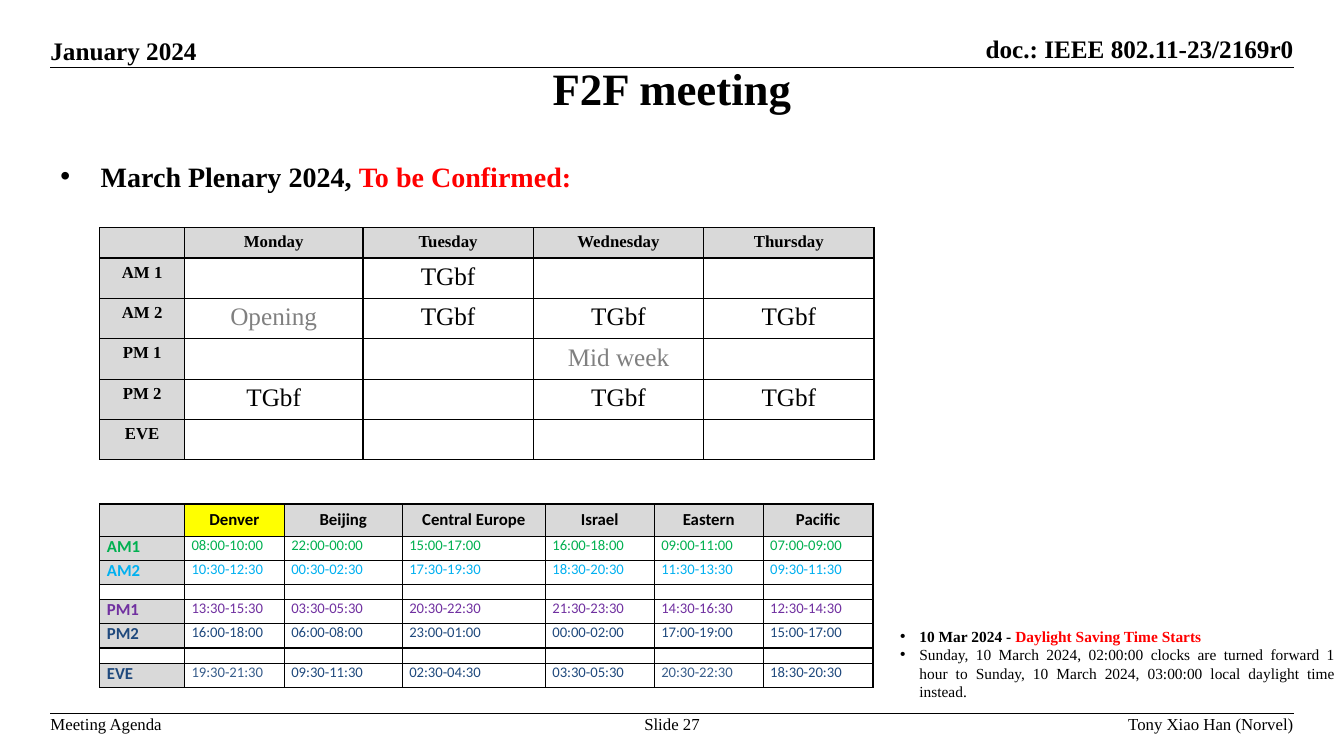
from pptx import Presentation
from pptx.dml.color import RGBColor
from pptx.enum.shapes import MSO_CONNECTOR as CONN, MSO_SHAPE as SHAPE
from pptx.enum.text import MSO_ANCHOR as ANCHOR, PP_ALIGN as ALIGN
from pptx.oxml.ns import qn
from pptx.util import Inches, Pt
from lxml.etree import SubElement

THEME = dict(
    serif="Times New Roman", sans="Calibri",
    black="000000", white="FFFFFF", red="FF0000", gray="808080", head="D9D9D9",
    host="FFFF00", am1="00B050", am2="00B0F0", pm1="7030A0", pm2="1F497D",
    late="385D8B",
    title=32, bullet=20, header=18, session=18, label=12, note=11, time=10.5,
    spacer=6,
)


def write(p, *parts, size="label", font="serif", color="black", bold=False,
          align=ALIGN.LEFT, after=0, hang=0):
    """Fill a paragraph; a part is a text or a (text, color) pair."""
    p.alignment = align
    p.space_after = Pt(after)
    if hang:
        pPr = p._p.get_or_add_pPr()
        pPr.set("marL", str(Inches(hang)))
        pPr.set("indent", str(-Inches(hang)))
        SubElement(pPr, qn("a:buFont")).set("typeface", "Arial")
        SubElement(pPr, qn("a:buChar")).set("char", "•")
    for part in parts:
        text, tint = part if isinstance(part, tuple) else (part, color)
        if not text:
            p._p.get_or_add_endParaRPr().set("sz", str(THEME[size] * 100))
            continue
        r = p.add_run()
        r.text = text
        r.font.size = Pt(THEME[size])
        r.font.name = THEME[font]
        r.font.bold = bold
        r.font.color.rgb = RGBColor.from_string(THEME[tint])


def add_grid(top, widths, heights, margin_x, margin_y):
    """Add an unstyled table with black cell borders."""
    width, height = Inches(sum(widths)), Inches(sum(heights))
    table = s.shapes.add_table(len(heights), len(widths), Inches(0.99),
                               Inches(top), width, height).table
    table.first_row = table.horz_banding = False
    for column, w in zip(table.columns, widths):
        column.width = Inches(w)
    for row, h in zip(table.rows, heights):
        row.height = Inches(h)
    for cell in table.iter_cells():
        cell.margin_left = cell.margin_right = Inches(margin_x)
        cell.margin_top = cell.margin_bottom = Inches(margin_y)
        tcPr = cell._tc.get_or_add_tcPr()
        for side in ("lnL", "lnR", "lnT", "lnB"):
            ln = SubElement(tcPr, qn(f"a:{side}"), w=str(Pt(1)))
            fill = SubElement(ln, qn("a:solidFill"))
            SubElement(fill, qn("a:srgbClr")).set("val", THEME["black"])
        cell.fill.background()
    return table


prs = Presentation()
prs.slide_width, prs.slide_height = Inches(13.33), Inches(7.5)
s = prs.slides.add_slide(prs.slide_layouts[6])

# Header and footer rules
for y in (0.67, 7.08):
    rule = s.shapes.add_connector(CONN.STRAIGHT, Inches(0.5), Inches(y),
                                  Inches(12.83), Inches(y))
    rule.line.width = Pt(1)
    rule.line.color.rgb = RGBColor.from_string(THEME["black"])
    SubElement(rule._element.spPr, qn("a:effectLst"))

# Header, footer and title
strong = dict(size="header", bold=True)
for text, box, anchor, wrap, style in (
    ("January 2024", (0.5, 0.35, 1.47, 0.3), ANCHOR.BOTTOM, False, strong),
    ("doc.: IEEE 802.11-23/2169r0", (9.24, 0.33, 3.59, 0.3), ANCHOR.BOTTOM, False,
     dict(strong, align=ALIGN.RIGHT)),
    ("Meeting Agenda", (0.5, 7.08, 1.12, 0.2), ANCHOR.TOP, False, {}),
    ("Slide 27", (6.37, 7.08, 0.59, 0.2), ANCHOR.TOP, False, dict(align=ALIGN.CENTER)),
    ("Tony Xiao Han (Norvel)", (8.82, 7.08, 4.01, 0.2), ANCHOR.TOP, True,
     dict(align=ALIGN.RIGHT)),
    ("F2F meeting", (0, 0.58, 13.33, 0.58), ANCHOR.MIDDLE, True,
     dict(size="title", bold=True, align=ALIGN.CENTER)),
):
    tf = s.shapes.add_textbox(*map(Inches, box)).text_frame
    tf.margin_left = tf.margin_right = tf.margin_top = tf.margin_bottom = 0
    tf.vertical_anchor, tf.word_wrap = anchor, wrap
    write(tf.paragraphs[0], text, **style)

# Meeting bullet
tf = s.shapes.add_textbox(Inches(0.5), Inches(1.53), Inches(7.17), Inches(0.92)).text_frame
tf.word_wrap = True
write(tf.paragraphs[0], "March Plenary 2024, ", ("To be Confirmed:", "red"),
      size="bullet", bold=True, align=ALIGN.JUSTIFY, after=6, hang=0.4)

# Session times by zone
zones = ["", "Denver", "Beijing", "Central Europe", "Israel", "Eastern", "Pacific"]
times = [
    ("AM1", "am1", "08:00-10:00 22:00-00:00 15:00-17:00 16:00-18:00 09:00-11:00 07:00-09:00"),
    ("AM2", "am2", "10:30-12:30 00:30-02:30 17:30-19:30 18:30-20:30 11:30-13:30 09:30-11:30"),
    None,
    ("PM1", "pm1", "13:30-15:30 03:30-05:30 20:30-22:30 21:30-23:30 14:30-16:30 12:30-14:30"),
    ("PM2", "pm2", "16:00-18:00 06:00-08:00 23:00-01:00 00:00-02:00 17:00-19:00 15:00-17:00"),
    None,
    ("EVE", "pm2", "19:30-21:30 09:30-11:30 02:30-04:30 03:30-05:30 20:30-22:30 18:30-20:30"),
]
heights = [0.32] + [0.24 if row else 0.15 for row in times]
table = add_grid(5, [0.84, 0.99, 1.17, 1.42, 1.08, 1.08, 1.09], heights, 0.07, 0)
for j, zone in enumerate(zones):
    cell = table.cell(0, j)
    cell.vertical_anchor = ANCHOR.MIDDLE
    cell.fill.solid()
    cell.fill.fore_color.rgb = RGBColor.from_string(THEME["host" if zone == "Denver" else "head"])
    write(cell.text_frame.paragraphs[0], zone, font="sans", bold=True,
          align=ALIGN.CENTER, after=6)
for i, row in enumerate(times, 1):
    if row is None:
        for j in range(len(zones)):
            write(table.cell(i, j).text_frame.paragraphs[0], "", size="spacer")
        continue
    label, color, slots = row
    for j, text in enumerate([label] + slots.split()):
        cell = table.cell(i, j)
        if j == 0:
            cell.fill.solid()
            cell.fill.fore_color.rgb = RGBColor.from_string(THEME["head"])
        late = label == "EVE" and zones[j] in ("Denver", "Eastern")
        write(cell.text_frame.paragraphs[0], text, font="sans", bold=j == 0, after=6,
              size="time" if j else "label", color="late" if late else color)

# Daylight saving note
sp = s.shapes.add_shape(SHAPE.RECTANGLE, Inches(8.83), Inches(6.17), Inches(4.51), Inches(0.66))
sp.shadow.inherit = False
sp.fill.solid()
sp.fill.fore_color.rgb = RGBColor.from_string(THEME["white"])
sp.line.fill.background()
tf = sp.text_frame
tf.word_wrap, tf.vertical_anchor = True, ANCHOR.TOP
note = dict(size="note", align=ALIGN.JUSTIFY, hang=0.19)
write(tf.paragraphs[0], "10 Mar 2024 - ", ("Daylight Saving Time Starts", "red"),
      bold=True, **note)
write(tf.add_paragraph(), "Sunday, 10 March 2024, 02:00:00 clocks are turned forward 1 hour "
      "to Sunday, 10 March 2024, 03:00:00 local daylight time instead.", **note)

# Weekly schedule
week = [
    ["", "Monday", "Tuesday", "Wednesday", "Thursday"],
    ["AM 1", "", "TGbf", "", ""],
    ["AM 2", "Opening", "TGbf", "TGbf", "TGbf"],
    ["PM 1", "", "", "Mid week", ""],
    ["PM 2", "TGbf", "", "TGbf", "TGbf"],
    ["EVE", "", "", "", ""],
]
table = add_grid(2.26, [0.84, 1.77] + [1.69] * 3, [0.3] + [0.4] * 5, 0.1, 0.05)
for i, row in enumerate(week):
    for j, text in enumerate(row):
        cell = table.cell(i, j)
        label = i == 0 or j == 0
        if label:
            cell.fill.solid()
            cell.fill.fore_color.rgb = RGBColor.from_string(THEME["head"])
        write(cell.text_frame.paragraphs[0], text, bold=label, align=ALIGN.CENTER,
              size="label" if label or not text else "session",
              color="gray" if text in ("Opening", "Mid week") else "black")

prs.save("out.pptx")
